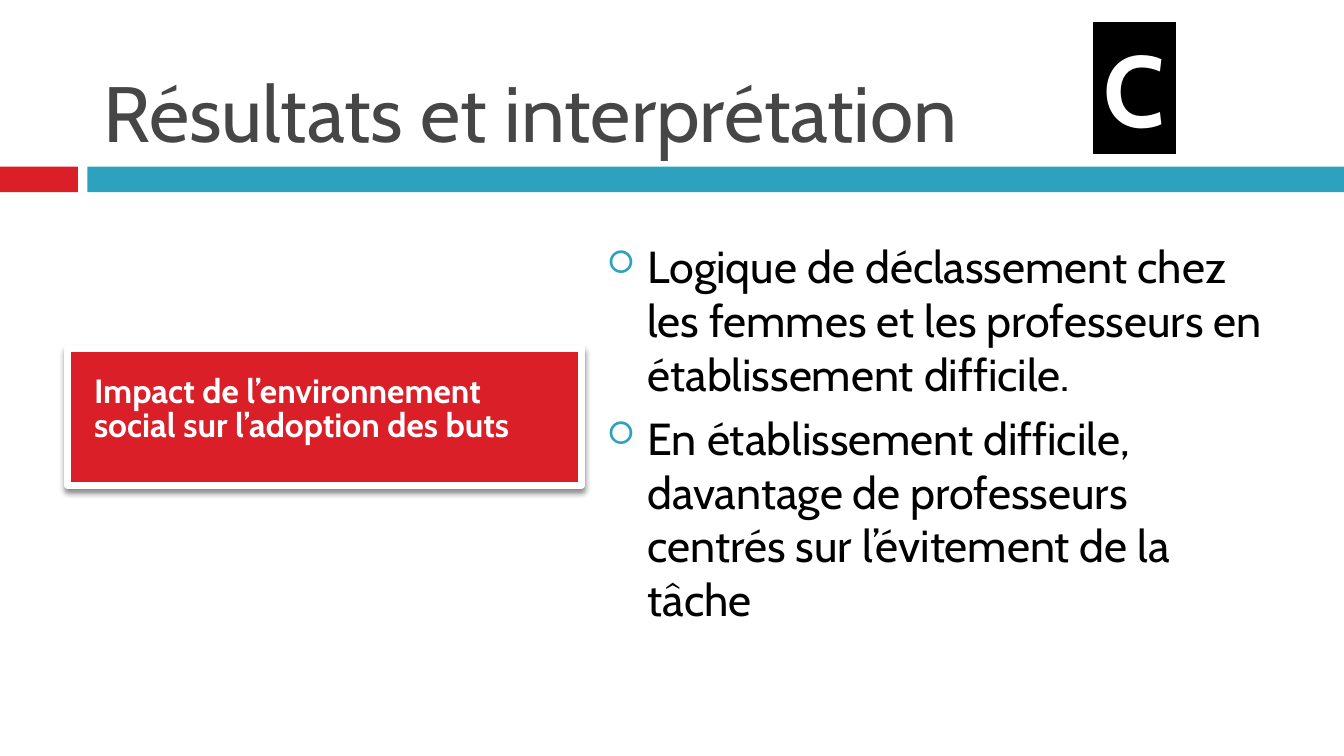
from lxml.etree import SubElement
from pptx import Presentation
from pptx.dml.color import RGBColor
from pptx.enum.shapes import MSO_SHAPE
from pptx.enum.text import MSO_ANCHOR, PP_ALIGN
from pptx.oxml.ns import qn
from pptx.util import Inches, Pt

HUES = {"red": "DA1F28", "teal": "2DA2BF", "gray": "464646",
        "white": "FFFFFF", "black": "000000"}


def box(left, top, width, height, fill, line=0):
    shape = slide.shapes.add_shape(
        MSO_SHAPE.RECTANGLE, Inches(left), Inches(top), Inches(width), Inches(height))
    shape.shadow.inherit = False
    shape.fill.solid()
    shape.fill.fore_color.rgb = RGBColor.from_string(HUES[fill])
    if line:
        shape.line.color.rgb = RGBColor.from_string(HUES["white"])
        shape.line.width = Pt(line)
    else:
        shape.line.fill.background()
    return shape


def write(shape, texts, size, hue, bold=False, anchor=MSO_ANCHOR.TOP,
          align=PP_ALIGN.LEFT, wrap=True, inset=(0.1, 0.05, 0.1, 0.05),
          before=0, space=1.0, bullet=None):
    frame = shape.text_frame
    frame.word_wrap = wrap
    frame.vertical_anchor = anchor
    frame.margin_left, frame.margin_top, frame.margin_right, frame.margin_bottom = map(Inches, inset)
    for i, text in enumerate(texts):
        para = frame.paragraphs[0] if i == 0 else frame.add_paragraph()
        para.alignment = align
        para.space_before = Pt(before)
        para.line_spacing = space
        run = para.add_run()
        run.text = text
        run.font.name = "Cabin"
        run.font.size = Pt(size)
        run.font.bold = bold
        run.font.color.rgb = RGBColor.from_string(HUES[hue])
        if bullet:
            props = para._p.get_or_add_pPr()
            props.set("marL", str(Inches(0.3)))
            props.set("indent", str(Inches(-0.3)))
            tint = SubElement(props, qn("a:buClr"))
            SubElement(tint, qn("a:srgbClr"), val=HUES["teal"])
            SubElement(props, qn("a:buSzPct"), val="70000")
            SubElement(props, qn("a:buFont"), typeface="Wingdings", charset="2")
            SubElement(props, qn("a:buChar"), char=bullet)


deck = Presentation()
deck.slide_width, deck.slide_height = Inches(10), Inches(10 * 9 / 16)
slide = deck.slides.add_slide(deck.slide_layouts[6])

for left, width, fill in ((0, 0.58, "red"), (0.65, 9.35, "teal")):
    box(left, 1.24, width, 0.19, fill)

title = slide.shapes.add_textbox(Inches(0.67), Inches(0.13), Inches(8.92), Inches(1.1))
write(title, ["Résultats et interprétation"], 42, "gray", anchor=MSO_ANCHOR.BOTTOM)

panel = box(0.5, 2.59, 3.83, 1.02, "red", line=3.75)
shade = SubElement(panel._element.spPr.find(qn("a:effectLst")), qn("a:outerShdw"),
                   blurRad=str(Pt(3)), dist=str(Pt(2.4)), dir="5400000", rotWithShape="0")
tone = SubElement(shade, qn("a:srgbClr"), val=HUES["black"])
SubElement(tone, qn("a:alpha"), val="45000")
write(panel, ["Impact de l’environnement social sur l’adoption des buts"], 18, "white",
      bold=True, anchor=MSO_ANCHOR.MIDDLE, inset=(0.2, 0.2, 0.2, 0.3), space=0.85)

body = slide.shapes.add_textbox(Inches(4.42), Inches(1.73), Inches(5.17), Inches(3.42))
write(body, [
    "Logique de déclassement chez les femmes et les professeurs en établissement difficile.",
    "En établissement difficile, davantage de professeurs centrés sur l’évitement de la tâche",
], 24, "black", before=5.5, bullet="□")

badge = box(8.12, 0.15, 0.64, 1.01, "black", line=1.5)
write(badge, ["C"], 54, "white", bold=True, align=PP_ALIGN.CENTER, wrap=False)

deck.save("out.pptx")
